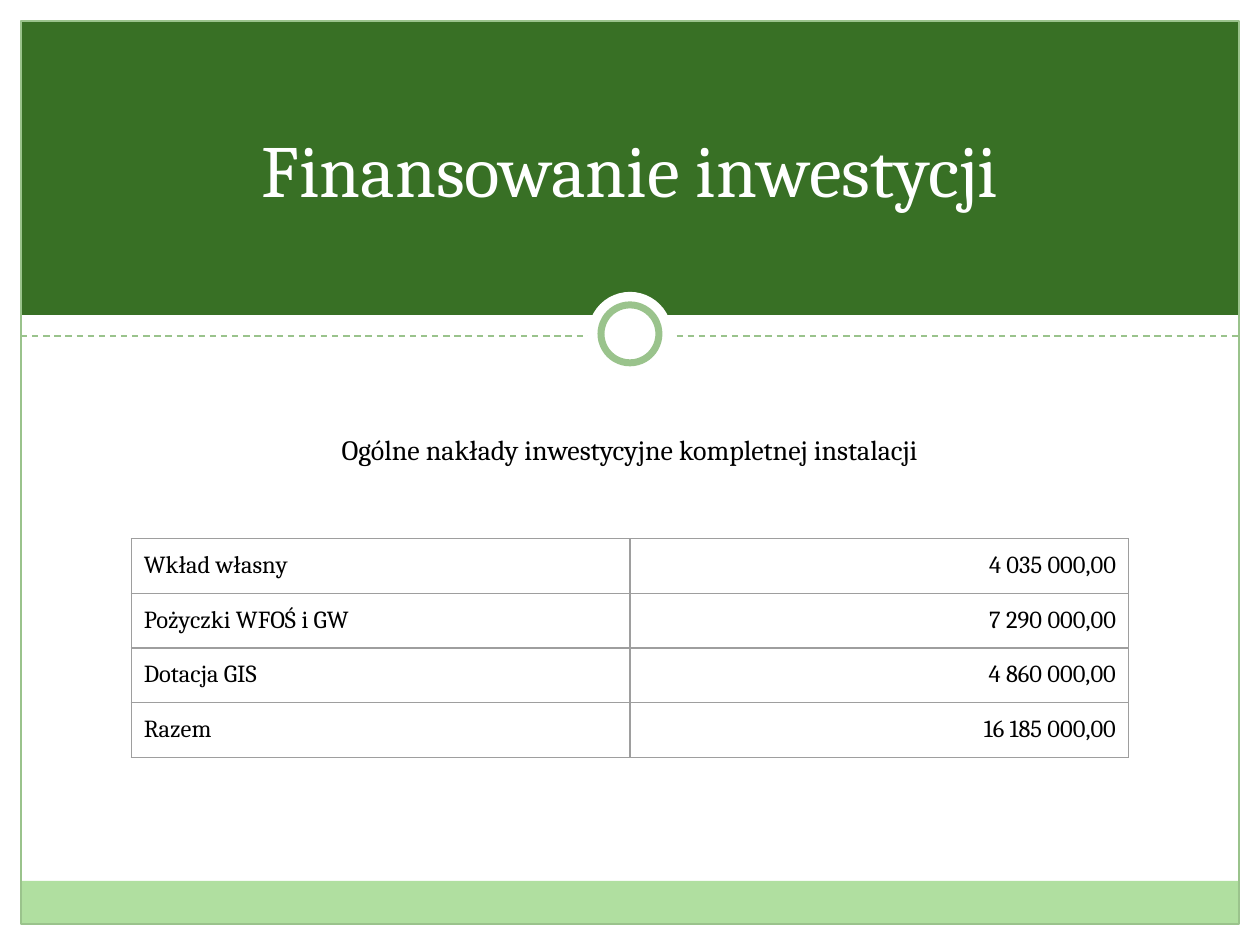
import lxml.etree
import pptx
import pptx.dml.color
import pptx.enum.dml
import pptx.enum.shapes
import pptx.enum.text
import pptx.oxml.ns
import pptx.util

COLORS = {"white": "FFFFFF", "banner": "387025", "footer": "B0DFA0",
          "accent": "9AC38C", "border": "9E9E9E", "text": "000000"}
FONT = "Cambria"
COLUMNS, ROWS = 60, 45
SHAPES = pptx.enum.shapes.MSO_SHAPE
ALIGN = pptx.enum.text.PP_ALIGN
MIDDLE = pptx.enum.text.MSO_ANCHOR.MIDDLE

deck = pptx.Presentation()
deck.slide_width = pptx.util.Inches(10)
deck.slide_height = pptx.util.Inches(7.5)
unit = deck.slide_width / COLUMNS
page = deck.slides.add_slide(deck.slide_layouts[6])


def grid(*lengths):
    """Turn grid columns or rows into slide lengths."""
    return [round(length * unit) for length in lengths]


def write(frame, text, size, color, align):
    para = frame.paragraphs[0]
    para.alignment = align
    span = para.add_run()
    span.text = text
    for name, value in {"name": FONT, "size": pptx.util.Pt(size)}.items():
        setattr(span.font, name, value)
    span.font.color.rgb = pptx.dml.color.RGBColor.from_string(COLORS[color])


# Margins, bands, frame, divider and ring, from back to front
parts = [
    (SHAPES.RECTANGLE, (0, 44, COLUMNS, 1), "white", None, 0),
    (SHAPES.RECTANGLE, (0, 0, COLUMNS, 1), "white", None, 0),
    (SHAPES.RECTANGLE, (59, 0, 1, ROWS), "white", None, 0),
    (SHAPES.RECTANGLE, (1, 15, 58, 2), "white", None, 0),
    (SHAPES.RECTANGLE, (1, 1, 58, 14), "banner", None, 0),
    (SHAPES.RECTANGLE, (1, 41.95, 58, 2.05), "footer", None, 0),
    (SHAPES.RECTANGLE, (1, 1, 58, 43), None, "accent", 0.75),
    ("divider", (1, 16, 59, 16), None, "accent", 0.9),
    (SHAPES.OVAL, (28, 13.9, 4, 4), "white", None, 0),
    (SHAPES.OVAL, (28.62, 14.52, 2.76, 2.76), "white", "accent", 4),
]
for kind, place, fill, line, width in parts:
    if kind == "divider":
        shape = page.shapes.add_connector(
            pptx.enum.shapes.MSO_CONNECTOR.STRAIGHT, *grid(*place))
        lxml.etree.SubElement(shape.line._get_or_add_ln().getparent(),
                              pptx.oxml.ns.qn("a:effectLst"))
        shape.line.dash_style = pptx.enum.dml.MSO_LINE.DASH
    else:
        shape = page.shapes.add_shape(kind, *grid(*place))
        shape.shadow.inherit = False
        if fill:
            shape.fill.solid()
            shape.fill.fore_color.rgb = pptx.dml.color.RGBColor.from_string(COLORS[fill])
        else:
            shape.fill.background()
    if line:
        shape.line.color.rgb = pptx.dml.color.RGBColor.from_string(COLORS[line])
        shape.line.width = pptx.util.Pt(width)
    else:
        shape.line.fill.background()

# Subtitle and title
for text, top, height, size, color in [
    ("Ogólne nakłady inwestycyjne kompletnej instalacji", 18.4, 5.95, 16, "text"),
    ("Finansowanie inwestycji", 1.4, 13.25, 42, "white"),
]:
    box = page.shapes.add_textbox(*grid(1.5, top, 57, height))
    for name, value in {"word_wrap": True, "vertical_anchor": MIDDLE}.items():
        setattr(box.text_frame, name, value)
    write(box.text_frame, text, size, color, ALIGN.CENTER)

# Funding table
funding = [
    ("Wkład własny", "4 035 000,00"),
    ("Pożyczki WFOŚ i GW", "7 290 000,00"),
    ("Dotacja GIS", "4 860 000,00"),
    ("Razem", "16 185 000,00"),
]
row_height = 2.54
table = page.shapes.add_table(
    len(funding), 2, *grid(6.25, 25.65, 47.5, row_height * len(funding))).table
table.first_row = table.horz_banding = False
margins = dict.fromkeys(
    ("margin_left", "margin_top", "margin_right", "margin_bottom"),
    pptx.util.Inches(0.1))
for row, texts in enumerate(funding):
    for column, (text, align) in enumerate(zip(texts, (ALIGN.LEFT, ALIGN.RIGHT))):
        cell = table.cell(row, column)
        for name, value in margins.items():
            setattr(cell, name, value)
        write(cell.text_frame, text, 14, "text", align)
        properties = cell._tc.get_or_add_tcPr()
        for side in ("a:lnL", "a:lnR", "a:lnT", "a:lnB"):
            edge = lxml.etree.SubElement(properties, pptx.oxml.ns.qn(side),
                                         w=str(pptx.util.Pt(0.75)))
            paint = lxml.etree.SubElement(edge, pptx.oxml.ns.qn("a:solidFill"))
            lxml.etree.SubElement(paint, pptx.oxml.ns.qn("a:srgbClr"),
                                  val=COLORS["border"])
        cell.fill.background()

deck.save("out.pptx")
